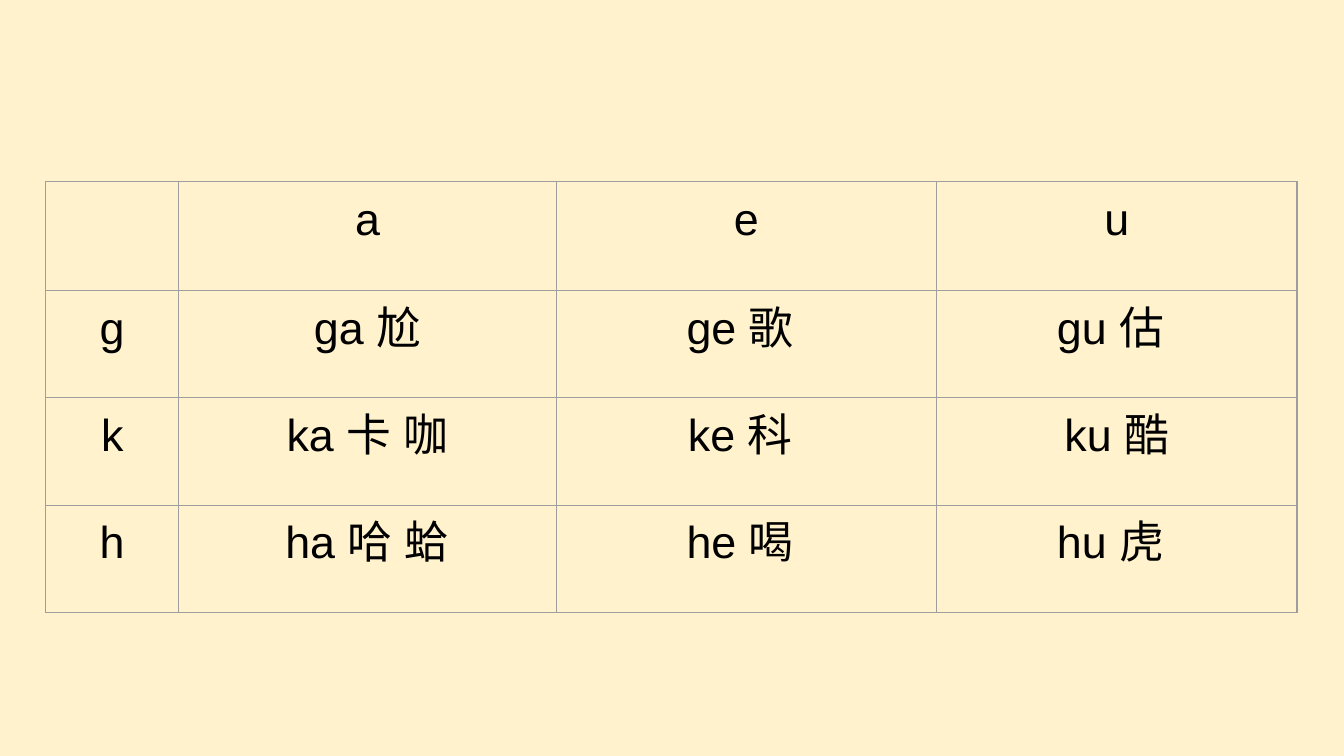
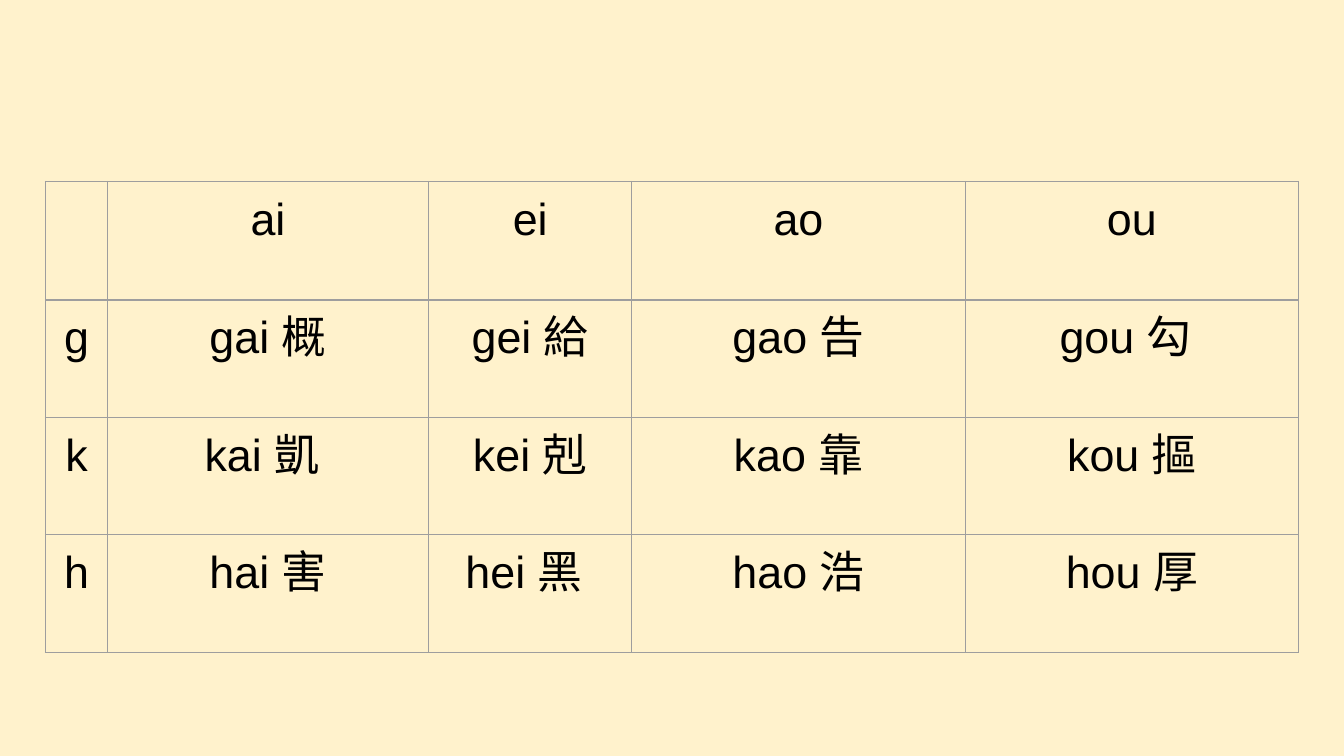
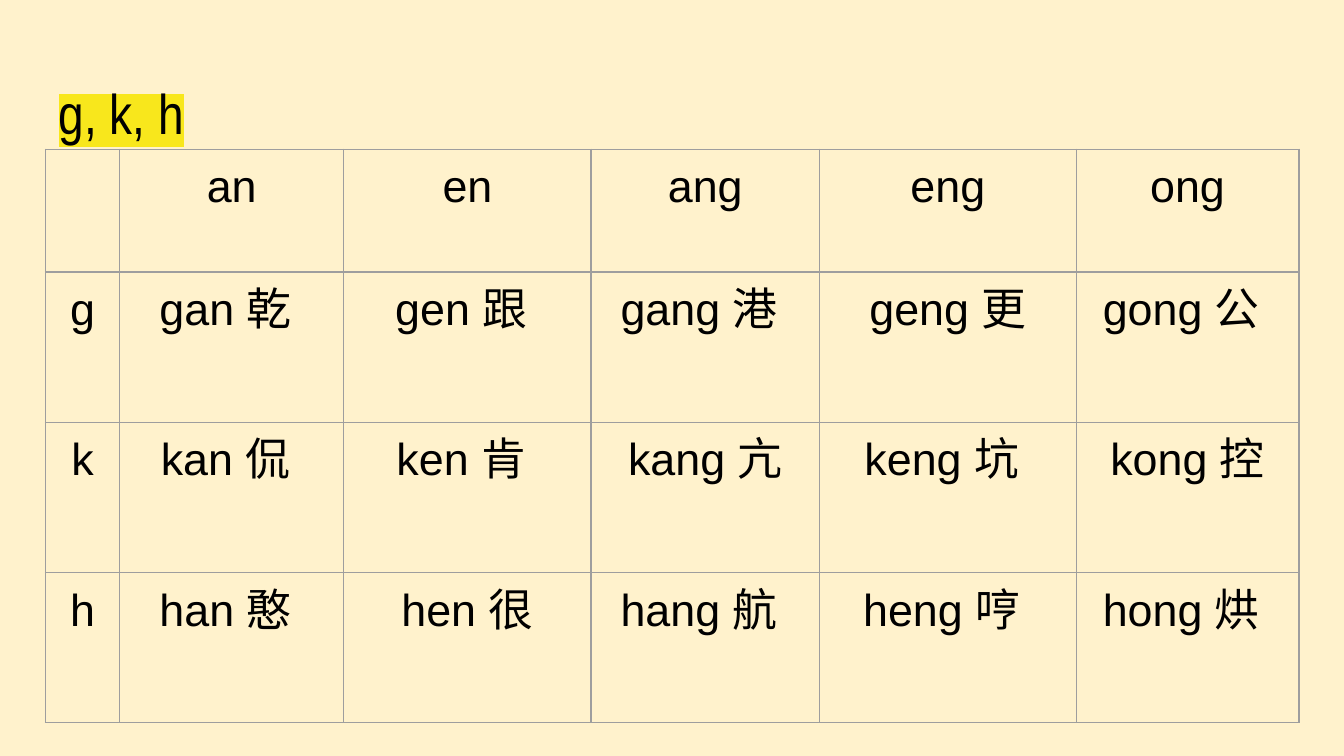
from lxml.etree import SubElement
from pptx import Presentation
from pptx.dml.color import RGBColor as RGB
from pptx.enum.text import MSO_ANCHOR as ANCHOR, PP_ALIGN as ALIGN
from pptx.oxml.ns import qn
from pptx.util import Cm, Pt

COLORS = {"page": "FFF2CC", "text": "000000", "border": "9E9E9E", "mark": "F8E71C"}
FONT, TITLE_FONT = "Arial", "Arial Narrow"
LEFT, INSET = 0.86, 0.25
INITIALS = ["g", "k", "h"]


def add_slide(prs):
    """Add a blank slide with the shared page colour."""
    s = prs.slides.add_slide(prs.slide_layouts[6])
    fill = s.background.fill
    fill.solid()
    fill.fore_color.rgb = RGB.from_string(COLORS["page"])
    return s


def set_insets(box):
    box.margin_left = box.margin_right = Cm(INSET)
    box.margin_top = box.margin_bottom = Cm(INSET)


def add_run(p, text, size, font):
    r = p.add_run()
    r.text = text
    r.font.size = Pt(size)
    r.font.name = font
    r.font.color.rgb = RGB.from_string(COLORS["text"])
    # Chinese characters take the same typeface
    SubElement(r.font._element, qn("a:ea"), typeface=font)
    return r


def highlight(r, color):
    rPr = r.font._element
    mark = SubElement(rPr, qn("a:highlight"))
    SubElement(mark, qn("a:srgbClr"), val=color)
    rPr.find(qn("a:latin")).addprevious(mark)


def add_title(s, text):
    """Add a highlighted title above the table."""
    sp = s.shapes.add_textbox(Cm(LEFT), Cm(1.24), Cm(23.67), Cm(1.6))
    tf = sp.text_frame
    tf.word_wrap = True
    tf.vertical_anchor = ANCHOR.TOP
    set_insets(tf)
    highlight(add_run(tf.paragraphs[0], text, 30, TITLE_FONT), COLORS["mark"])


def set_borders(cell):
    tcPr = cell._tc.get_or_add_tcPr()
    for i, side in enumerate(("lnL", "lnR", "lnT", "lnB")):
        ln = tcPr.makeelement(qn(f"a:{side}"), w=str(Pt(0.75)))
        fill = SubElement(ln, qn("a:solidFill"))
        SubElement(fill, qn("a:srgbClr"), val=COLORS["border"])
        tcPr.insert(i, ln)


def add_syllable_table(s, top, widths, heights, finals, syllables):
    """Add a grid of initials (rows) against finals (columns)."""
    rows = [["", *finals]]
    rows += [[initial, *line] for initial, line in zip(INITIALS, syllables)]
    frame = s.shapes.add_table(len(rows), len(widths), Cm(LEFT), Cm(top),
                               Cm(sum(widths)), Cm(sum(heights)))
    table = frame.table
    table.first_row = table.horz_banding = False
    for column, width in zip(table.columns, widths):
        column.width = Cm(width)
    for row, height, texts in zip(table.rows, heights, rows):
        row.height = Cm(height)
        for cell, text in zip(row.cells, texts):
            cell.fill.background()
            set_borders(cell)
            set_insets(cell)
            p = cell.text_frame.paragraphs[0]
            p.alignment = ALIGN.CENTER
            if text:
                add_run(p, text, 24, FONT)


def main():
    prs = Presentation()
    prs.slide_width, prs.slide_height = Cm(25.4), Cm(14.29)

    # Simple finals
    add_syllable_table(
        add_slide(prs), 3.43, [2.52, 7.13, 7.19, 6.81], [2.06] + [2.03] * 3,
        ["a", "e", "u"],
        [["ga 尬", "ge 歌 ", "gu 估 "],
         ["ka 卡 咖", "ke 科 ", "ku 酷"],
         ["ha 哈 蛤", "he 喝 ", "hu 虎 "]])

    # Compound finals
    add_syllable_table(
        add_slide(prs), 3.43, [1.17, 6.07, 3.84, 6.3, 6.3], [2.24] + [2.22] * 3,
        ["ai", "ei", "ao", "ou"],
        [["gai 概", "gei 給", "gao 告", "gou 勾 "],
         ["kai 凱 ", "kei 剋", "kao 靠", "kou 摳"],
         ["hai 害", "hei 黑 ", "hao 浩", "hou 厚"]])

    # Nasal finals
    s = add_slide(prs)
    add_title(s, "g, k, h")
    add_syllable_table(
        s, 2.82, [1.4, 4.24, 4.67, 4.32, 4.85, 4.21], [2.32] + [2.84] * 3,
        ["an", "en", "ang", "eng", "ong"],
        [["gan 乾 ", "gen 跟 ", "gang 港 ", "geng 更", "gong 公 "],
         ["kan 侃 ", "ken 肯 ", "kang 亢", "keng 坑 ", "kong 控"],
         ["han 憨 ", "hen 很", "hang 航 ", "heng 哼 ", "hong 烘 "]])

    prs.save("out.pptx")


if __name__ == "__main__":
    main()
